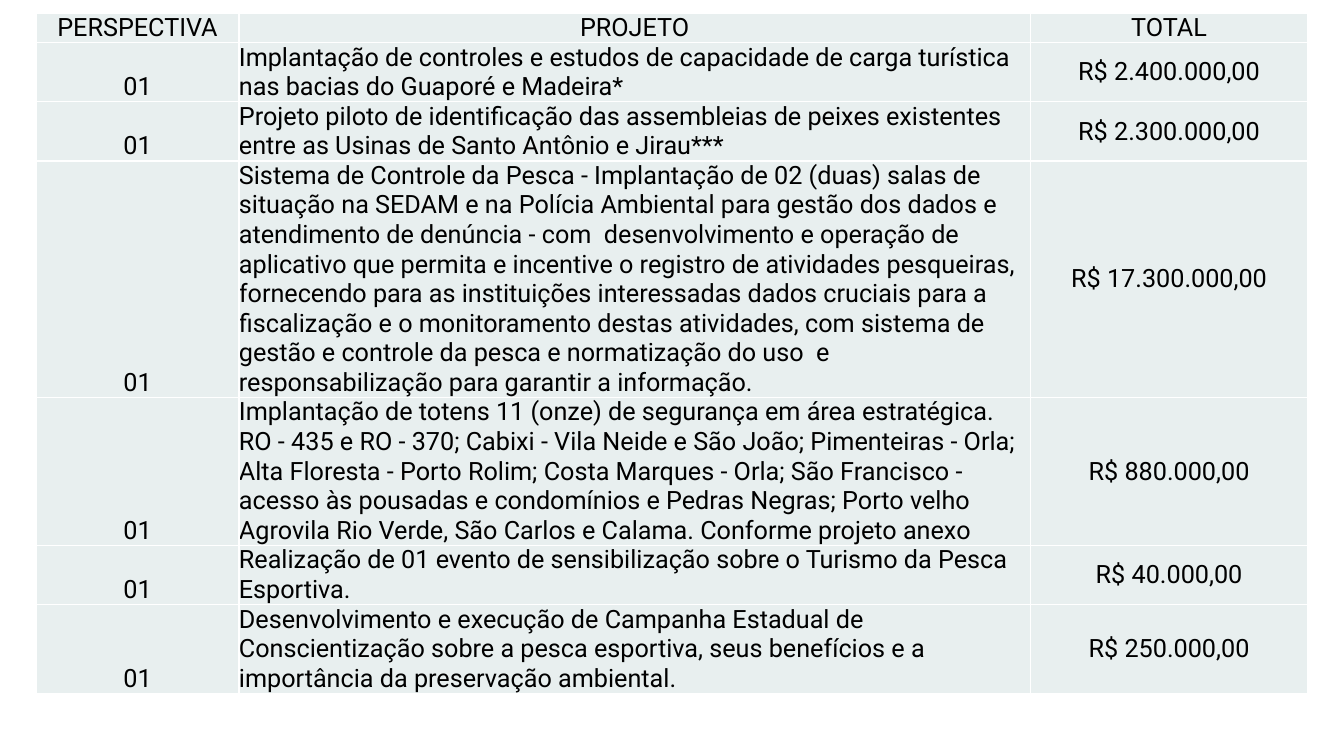
from pptx import Presentation
from pptx.dml.color import RGBColor
from pptx.enum.text import MSO_ANCHOR, PP_ALIGN
from pptx.oxml import parse_xml
from pptx.oxml.ns import nsdecls
from pptx.util import Inches, Pt

HEADS = ("PERSPECTIVA", "PROJETO", "TOTAL")
ITEMS = [
    (2, "Implantação de controles e estudos de capacidade de carga turística nas bacias "
        "do Guaporé e Madeira*", "R$ 2.400.000,00"),
    (2, "Projeto piloto de identificação das assembleias de peixes existentes entre as "
        "Usinas de Santo Antônio e Jirau***", "R$ 2.300.000,00"),
    (8, "Sistema de Controle da Pesca - Implantação de 02 (duas) salas de situação na "
        "SEDAM e na Polícia Ambiental para gestão dos dados e atendimento de denúncia - "
        "com  desenvolvimento e operação de aplicativo que permita e incentive o registro "
        "de atividades pesqueiras, fornecendo para as instituições interessadas dados "
        "cruciais para a fiscalização e o monitoramento destas atividades, com sistema de "
        "gestão e controle da pesca e normatização do uso  e responsabilização para "
        "garantir a informação.", "R$ 17.300.000,00"),
    (5, "Implantação de totens 11 (onze) de segurança em área estratégica. RO - 435 e "
        "RO - 370; Cabixi - Vila Neide e São João; Pimenteiras - Orla; Alta Floresta - "
        "Porto Rolim; Costa Marques - Orla; São Francisco - acesso às pousadas e "
        "condomínios e Pedras Negras; Porto velho Agrovila Rio Verde, São Carlos e "
        "Calama. Conforme projeto anexo", "R$ 880.000,00"),
    (2, "Realização de 01 evento de sensibilização sobre o Turismo da Pesca Esportiva.",
     "R$ 40.000,00"),
    (3, "Desenvolvimento e execução de Campanha Estadual de Conscientização sobre a pesca "
        "esportiva, seus benefícios e a importância da preservação ambiental.",
     "R$ 250.000,00"),
]
VIEW = "01"
THEME = {"font": "Roboto", "size": 18, "ink": "000000", "fill": "E8EFEF",
         "edge": "FFFFFF", "width": 1}
LEFT, TOP = 0.36, 0.13
WIDTHS = (2.01, 7.85, 2.75)
LINE = 0.29


def add_edges(cell):
    props = cell._tc.get_or_add_tcPr()
    for i, side in enumerate(("lnL", "lnR", "lnT", "lnB")):
        props.insert(i, parse_xml(
            f'<a:{side} {nsdecls("a")} w="{Pt(THEME["width"])}"><a:solidFill>'
            f'<a:srgbClr val="{THEME["edge"]}"/></a:solidFill></a:{side}>'))


def fill_cell(cell, text, align, anchor):
    cell.margin_left = cell.margin_right = cell.margin_top = cell.margin_bottom = 0
    cell.vertical_anchor = anchor
    cell.fill.solid()
    cell.fill.fore_color.rgb = RGBColor.from_string(THEME["fill"])
    add_edges(cell)
    cell.text_frame.text = text
    para = cell.text_frame.paragraphs[0]
    para.alignment = align
    font = para.runs[0].font
    font.name = THEME["font"]
    font.size = Pt(THEME["size"])
    font.bold = False
    font.color.rgb = RGBColor.from_string(THEME["ink"])


def main():
    deck = Presentation()
    deck.slide_width, deck.slide_height = Inches(13.33), Inches(7.5)
    slide = deck.slides.add_slide(deck.slide_layouts[6])

    rows = [(1, HEADS)] + [(lines, (VIEW, task, cost)) for lines, task, cost in ITEMS]
    high = LINE * sum(lines for lines, _ in rows)
    table = slide.shapes.add_table(len(rows), len(WIDTHS), Inches(LEFT), Inches(TOP),
                                   Inches(sum(WIDTHS)), Inches(high)).table
    table.first_row = table.horz_banding = False
    for col, width in zip(table.columns, WIDTHS):
        col.width = Inches(width)
    for r, (lines, texts) in enumerate(rows):
        table.rows[r].height = Inches(LINE * lines)
        for c, text in enumerate(texts):
            align = PP_ALIGN.LEFT if r and c == 1 else PP_ALIGN.CENTER
            anchor = MSO_ANCHOR.MIDDLE if r and c == 2 else MSO_ANCHOR.BOTTOM
            fill_cell(table.cell(r, c), text, align, anchor)

    deck.save("out.pptx")


if __name__ == "__main__":
    main()
